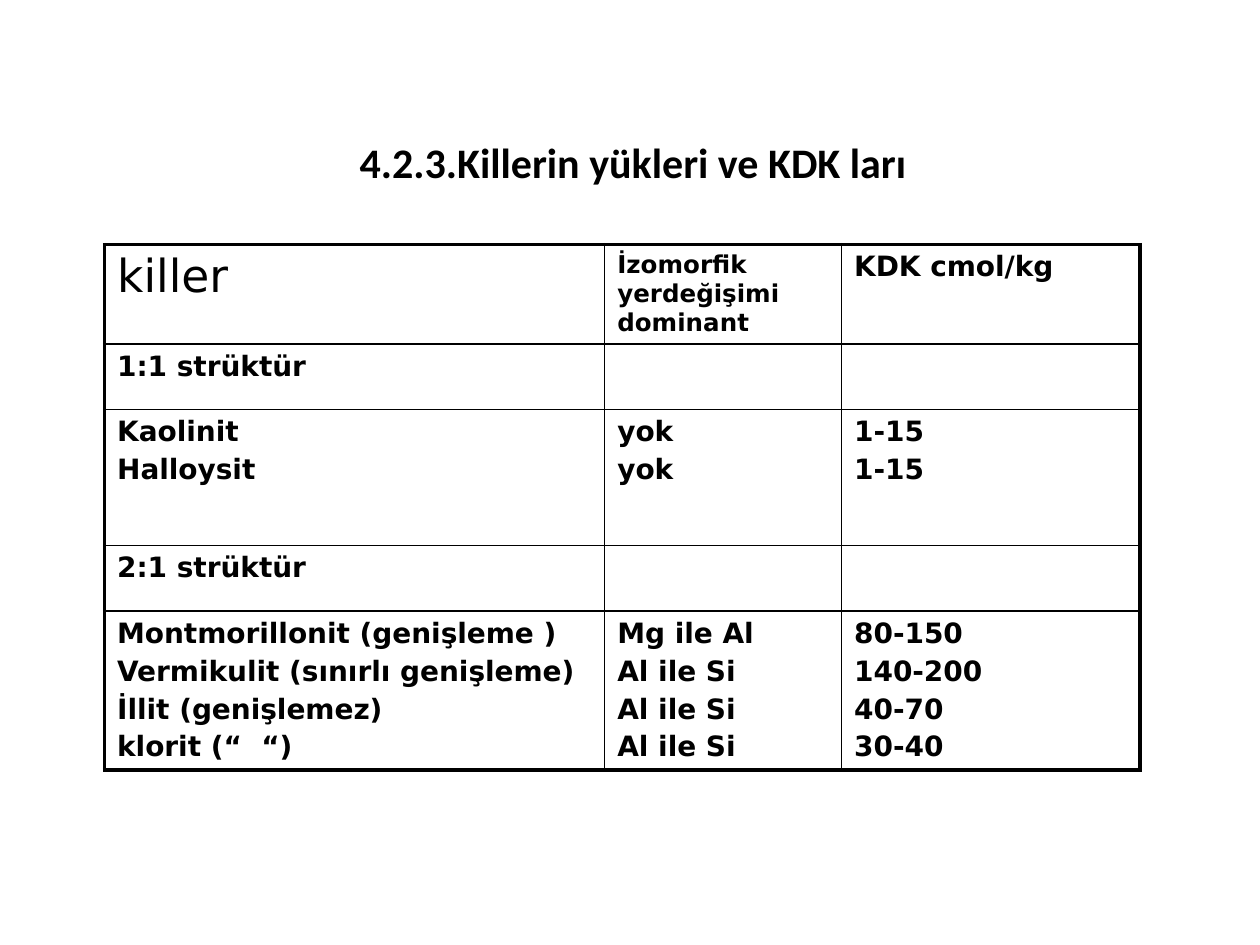
"""Build a slide with a table of clay charges and cation exchange capacities."""
import pptx
import pptx.util
import pptx.dml.color
import pptx.enum.text
import pptx.oxml.ns
from lxml import etree

TITLE = "4.2.3.Killerin yükleri ve KDK ları"
CLAY_ROWS = [
    (["killer"], ["İzomorfik yerdeğişimi dominant"], ["KDK cmol/kg"]),
    (["1:1 strüktür"], [], []),
    (["Kaolinit", "Halloysit"], ["yok", "yok"], ["1-15", "1-15"]),
    (["2:1 strüktür"], [], []),
    (["Montmorillonit (genişleme )", "Vermikulit (sınırlı genişleme)",
      "İllit (genişlemez)", "klorit (“  “)"],
     ["Mg ile Al", "Al ile Si", "Al ile Si", "Al ile Si"],
     ["80-150", "140-200", "40-70", "30-40"]),
]
COLUMN_WIDTHS = [3.97, 1.88, 2.37]
ROW_HEIGHTS = [0.79, 0.52, 1.08, 0.52, 1.26]
TITLE_BOX = (0.67, 0.91, 8.71, 0.75)
TABLE_CORNER = (0.83, 1.94)
INK = "000000"
OUTER, INNER = 2.25, 1
BODY_FORMAT = {"name": "DejaVu Sans", "size": 16, "bold": True}
HEADER_FORMATS = [{"size": 26, "bold": False}, {"size": 14}, {}]
TITLE_FORMAT = {"name": "Calibri", "size": 24, "bold": True}


def set_color(target, value):
    target.rgb = pptx.dml.color.RGBColor.from_string(value)


def set_font(font, values):
    for key, value in values.items():
        setattr(font, key, pptx.util.Pt(value) if key == "size" else value)
    set_color(font.color, INK)


def set_borders(cell, widths):
    properties = cell._tc.get_or_add_tcPr()
    for position, (side, width) in enumerate(widths.items()):
        line = etree.Element(pptx.oxml.ns.qn(f"a:ln{side}"), w=str(pptx.util.Pt(width)))
        fill = etree.SubElement(line, pptx.oxml.ns.qn("a:solidFill"))
        etree.SubElement(fill, pptx.oxml.ns.qn("a:srgbClr"), val=INK)
        properties.insert(position, line)


def fill_cell(cell, entries, values):
    cell.fill.background()
    frame = cell.text_frame
    frame.text = "\n".join(entries)
    for index, paragraph in enumerate(frame.paragraphs):
        if index:
            paragraph.space_before = pptx.util.Pt(0.2 * values["size"])
        set_font(paragraph.font, values)


def add_title(slide):
    title = slide.shapes.title
    for side, value in zip(("left", "top", "width", "height"), TITLE_BOX):
        setattr(title, side, pptx.util.Inches(value))
    title.text = TITLE
    title.text_frame.vertical_anchor = pptx.enum.text.MSO_ANCHOR.MIDDLE
    paragraph = title.text_frame.paragraphs[0]
    paragraph.alignment = pptx.enum.text.PP_ALIGN.CENTER
    set_font(paragraph.font, TITLE_FORMAT)


def add_clay_table(slide):
    last_row, last_column = len(ROW_HEIGHTS) - 1, len(COLUMN_WIDTHS) - 1
    box = (*TABLE_CORNER, sum(COLUMN_WIDTHS), sum(ROW_HEIGHTS))
    table = slide.shapes.add_table(
        last_row + 1, last_column + 1, *map(pptx.util.Inches, box)).table
    table.first_row = table.horz_banding = False
    for column, width in zip(table.columns, COLUMN_WIDTHS):
        column.width = pptx.util.Inches(width)
    for row, height in zip(table.rows, ROW_HEIGHTS):
        row.height = pptx.util.Inches(height)
    for r, clay_row in enumerate(CLAY_ROWS):
        for c, entries in enumerate(clay_row):
            cell = table.cell(r, c)
            fill_cell(cell, entries, BODY_FORMAT | (HEADER_FORMATS[c] if r == 0 else {}))
            on_edge = {"L": c == 0, "R": c == last_column, "T": r == 0, "B": r == last_row}
            set_borders(cell, {side: OUTER if edge else INNER for side, edge in on_edge.items()})


def main():
    deck = pptx.Presentation()
    deck.slide_width, deck.slide_height = pptx.util.Inches(10), pptx.util.Inches(7.5)
    slide = deck.slides.add_slide(deck.slide_layouts[5])
    add_title(slide)
    add_clay_table(slide)
    deck.save("out.pptx")


if __name__ == "__main__":
    main()
